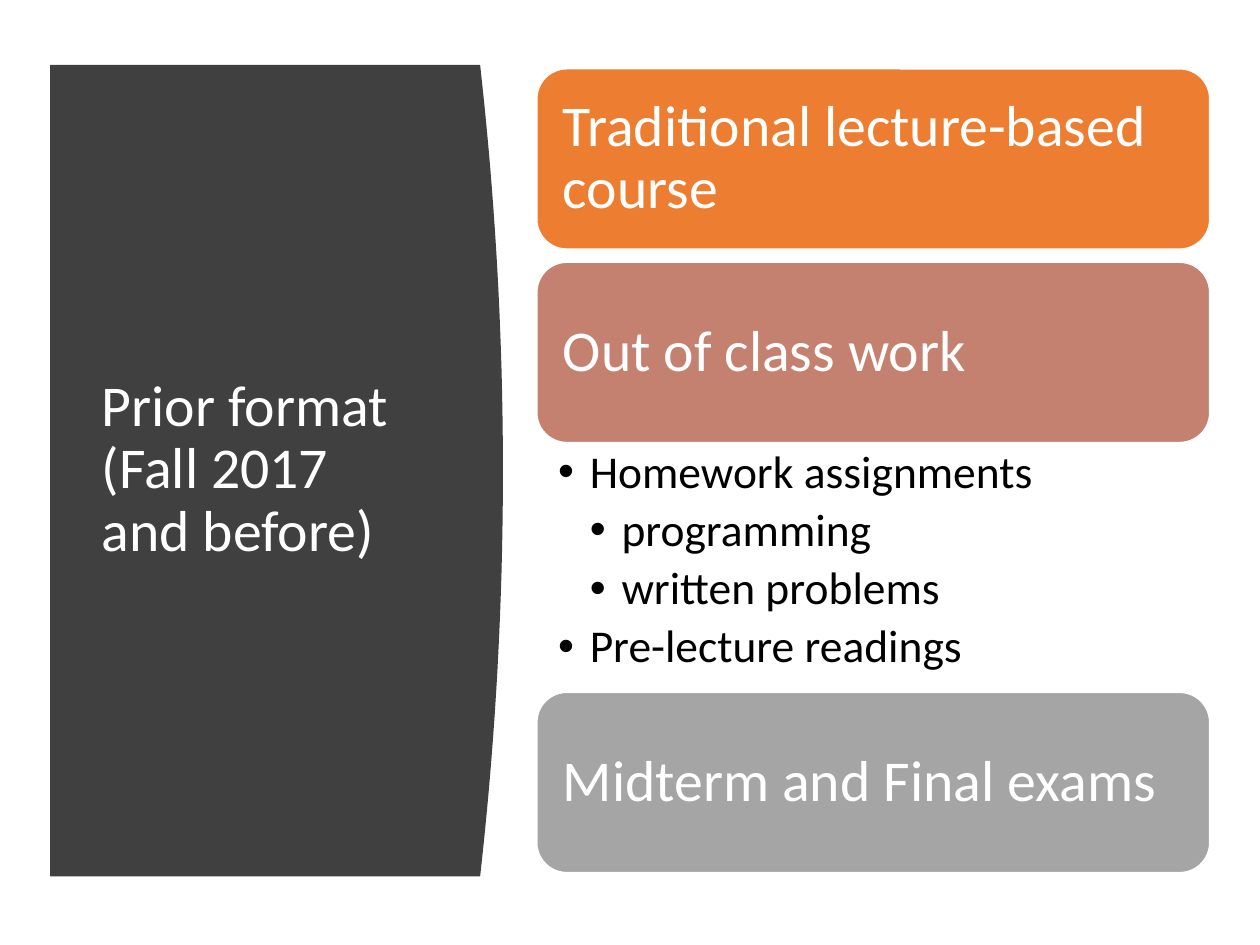
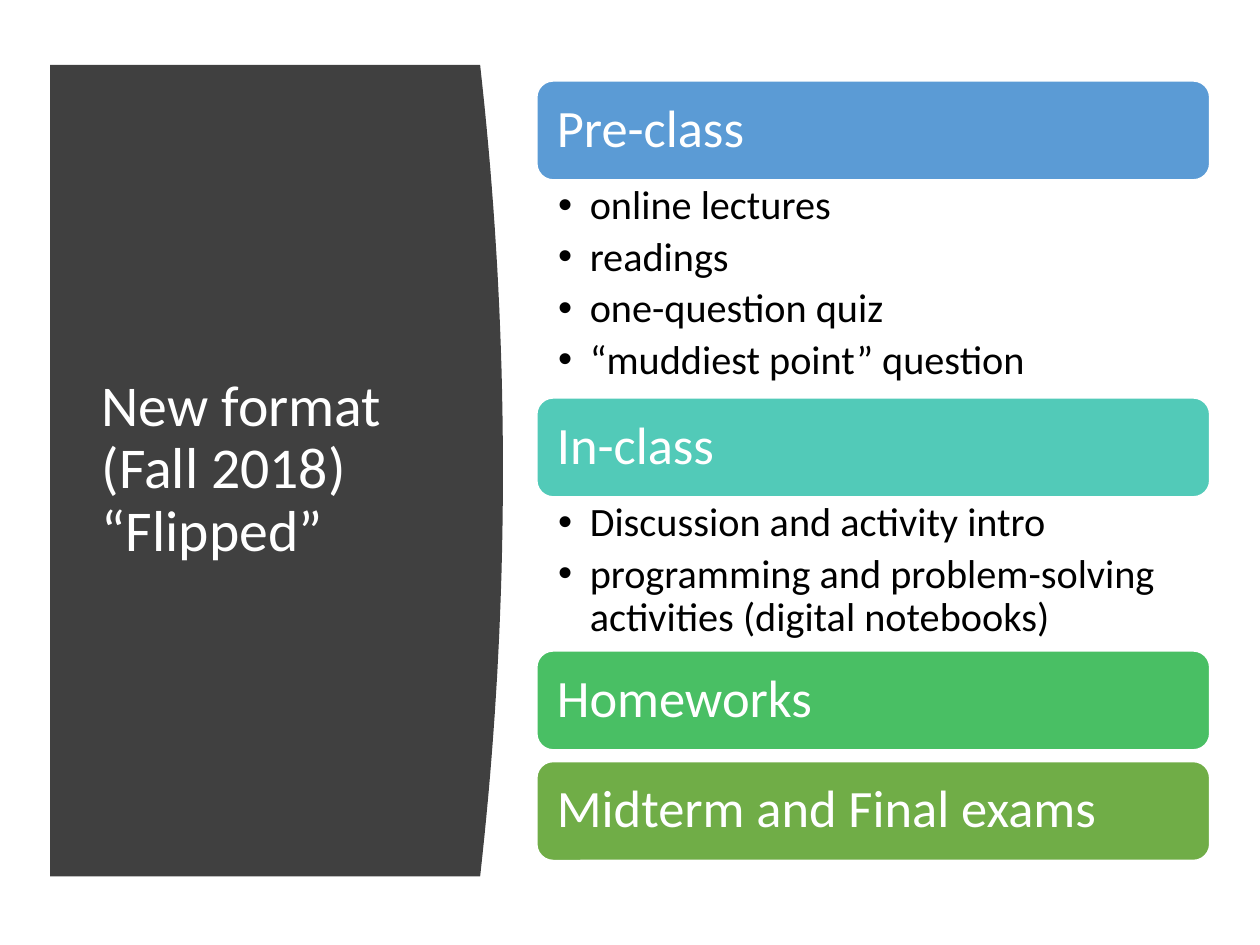
"""Build two slides comparing the prior and the new course format."""
from lxml import etree
from pptx import Presentation
from pptx.dml.color import RGBColor
from pptx.enum.shapes import MSO_SHAPE
from pptx.enum.text import MSO_ANCHOR, MSO_AUTO_SIZE, PP_ALIGN
from pptx.oxml.ns import qn
from pptx.util import Cm, Pt

ROUNDED = MSO_SHAPE.ROUNDED_RECTANGLE
MIDDLE, TOP = MSO_ANCHOR.MIDDLE, MSO_ANCHOR.TOP
LEFT = PP_ALIGN.LEFT
NO_AUTOFIT = MSO_AUTO_SIZE.NONE

FONT = "Calibri"
WHITE, BLACK, CHARCOAL = "FFFFFF", "000000", "404040"
TITLE_SIZE = 33
TITLE_BOX = (1.8, 2.82, 7.11, 13.31)
PANEL_LEFT, PANEL_TOP, PANEL_HEIGHT = 1.01, 1.31, 16.36
PANEL_EDGE, PANEL_BULGE, PANEL_STEPS = 9.68, 0.46, 40
BAR_LEFT, BAR_WIDTH = 10.82, 13.57
BULLET_INDENT = 0.64

SLIDES = [
    {
        "title": "Prior format (Fall 2017 and before)",
        "bar_height": 3.64, "gap": 0.26, "bar_size": 33, "bar_inset": 0.35,
        "bullet_size": 26, "bullet_insets": (0.43, 0.13, 0.66, 0.13),
        "sections": [
            ("Traditional lecture-based course", "ED7D31", 0, []),
            ("Out of class work", "C48170", 5.03, [
                (0, "Homework assignments"),
                (1, "programming"),
                (1, "written problems"),
                (0, "Pre-lecture readings"),
            ]),
            ("Midterm and Final exams", "A5A5A5", 0, []),
        ],
    },
    {
        "title": "New format (Fall 2018)\v“Flipped”",
        "bar_height": 2, "gap": 0.23, "bar_size": 30, "bar_inset": 0.31,
        "bullet_size": 23, "bullet_insets": (0.43, 0.1, 0.58, 0.1),
        "sections": [
            ("Pre-class", "5B9BD5", 4.39, [
                (0, "online lectures"),
                (0, "readings"),
                (0, "one-question quiz"),
                (0, "“muddiest point” question"),
            ]),
            ("In-class", "52CAB8", 3.1, [
                (0, "Discussion and activity intro"),
                (0, "programming and problem-solving activities (digital notebooks)"),
            ]),
            ("Homeworks", "49BF64", 0, []),
            ("Midterm and Final exams", "70AD47", 0, []),
        ],
    },
]


def rgb(color):
    return RGBColor.from_string(color)


def set_frame(text_frame, anchor, insets):
    text_frame.word_wrap = True
    text_frame.auto_size = NO_AUTOFIT
    text_frame.vertical_anchor = anchor
    (text_frame.margin_left, text_frame.margin_top,
     text_frame.margin_right, text_frame.margin_bottom) = map(Cm, insets)


def format_paragraph(paragraph, size, color):
    paragraph.alignment = LEFT
    paragraph.line_spacing = 0.9
    for run in paragraph.runs:
        run.font.name = FONT
        run.font.size = Pt(size)
        run.font.color.rgb = rgb(color)


def add_panel(slide):
    points = []
    for step in range(PANEL_STEPS + 1):
        offset = 2 * step / PANEL_STEPS - 1
        x = PANEL_EDGE + PANEL_BULGE * (1 - offset ** 2)
        points.append((Cm(x), Cm(PANEL_TOP + PANEL_HEIGHT * step / PANEL_STEPS)))
    points.append((Cm(PANEL_LEFT), Cm(PANEL_TOP + PANEL_HEIGHT)))
    builder = slide.shapes.build_freeform(Cm(PANEL_LEFT), Cm(PANEL_TOP))
    builder.add_line_segments(points, close=True)
    panel = builder.convert_to_shape()
    panel.shadow.inherit = False
    panel.fill.solid()
    panel.fill.fore_color.rgb = rgb(CHARCOAL)
    panel.line.fill.background()
    slide.shapes.title.element.addprevious(panel.element)


def set_title(slide, text):
    title = slide.shapes.title
    title.left, title.top, title.width, title.height = map(Cm, TITLE_BOX)
    set_frame(title.text_frame, MIDDLE, (0.25, 0.13, 0.25, 0.13))
    title.text_frame.text = text
    format_paragraph(title.text_frame.paragraphs[0], TITLE_SIZE, WHITE)


def add_bar(slide, top, text, color, style):
    bar = slide.shapes.add_shape(
        ROUNDED, Cm(BAR_LEFT), Cm(top), Cm(BAR_WIDTH), Cm(style["bar_height"]))
    bar.shadow.inherit = False
    bar.fill.solid()
    bar.fill.fore_color.rgb = rgb(color)
    bar.line.color.rgb = rgb(WHITE)
    bar.line.width = Pt(1)
    set_frame(bar.text_frame, MIDDLE, [style["bar_inset"]] * 4)
    bar.text_frame.text = text
    format_paragraph(bar.text_frame.paragraphs[0], style["bar_size"], WHITE)


def add_bullet(paragraph, level):
    properties = paragraph._p.get_or_add_pPr()
    properties.set("marL", str(Cm(BULLET_INDENT * (level + 1))))
    properties.set("indent", str(-Cm(BULLET_INDENT)))
    etree.SubElement(properties, qn("a:buFont")).set("typeface", "Arial")
    etree.SubElement(properties, qn("a:buChar")).set("char", "•")


def add_bullet_list(slide, top, height, bullets, style):
    box = slide.shapes.add_textbox(
        Cm(BAR_LEFT), Cm(top), Cm(BAR_WIDTH), Cm(height))
    text_frame = box.text_frame
    set_frame(text_frame, TOP, style["bullet_insets"])
    text_frame.text = "\n".join(text for _, text in bullets)
    for paragraph, (level, _) in zip(text_frame.paragraphs, bullets):
        paragraph.level = level
        format_paragraph(paragraph, style["bullet_size"], BLACK)
        paragraph.space_after = Pt(style["bullet_size"] * 0.2)
        add_bullet(paragraph, level)


def add_sections(slide, style):
    sections = style["sections"]
    spaces = [height or style["gap"] for _, _, height, _ in sections]
    total = len(sections) * style["bar_height"] + sum(spaces[:-1])
    top = PANEL_TOP + (PANEL_HEIGHT - total) / 2
    for (heading, color, height, bullets), space in zip(sections, spaces):
        add_bar(slide, top, heading, color, style)
        top += style["bar_height"]
        if bullets:
            add_bullet_list(slide, top, height, bullets, style)
        top += space


def main():
    presentation = Presentation()
    presentation.slide_width, presentation.slide_height = Cm(25.4), Cm(19.05)
    title_only = presentation.slide_layouts[5]
    for content in SLIDES:
        slide = presentation.slides.add_slide(title_only)
        add_panel(slide)
        set_title(slide, content["title"])
        add_sections(slide, content)
    presentation.save("out.pptx")


if __name__ == "__main__":
    main()
